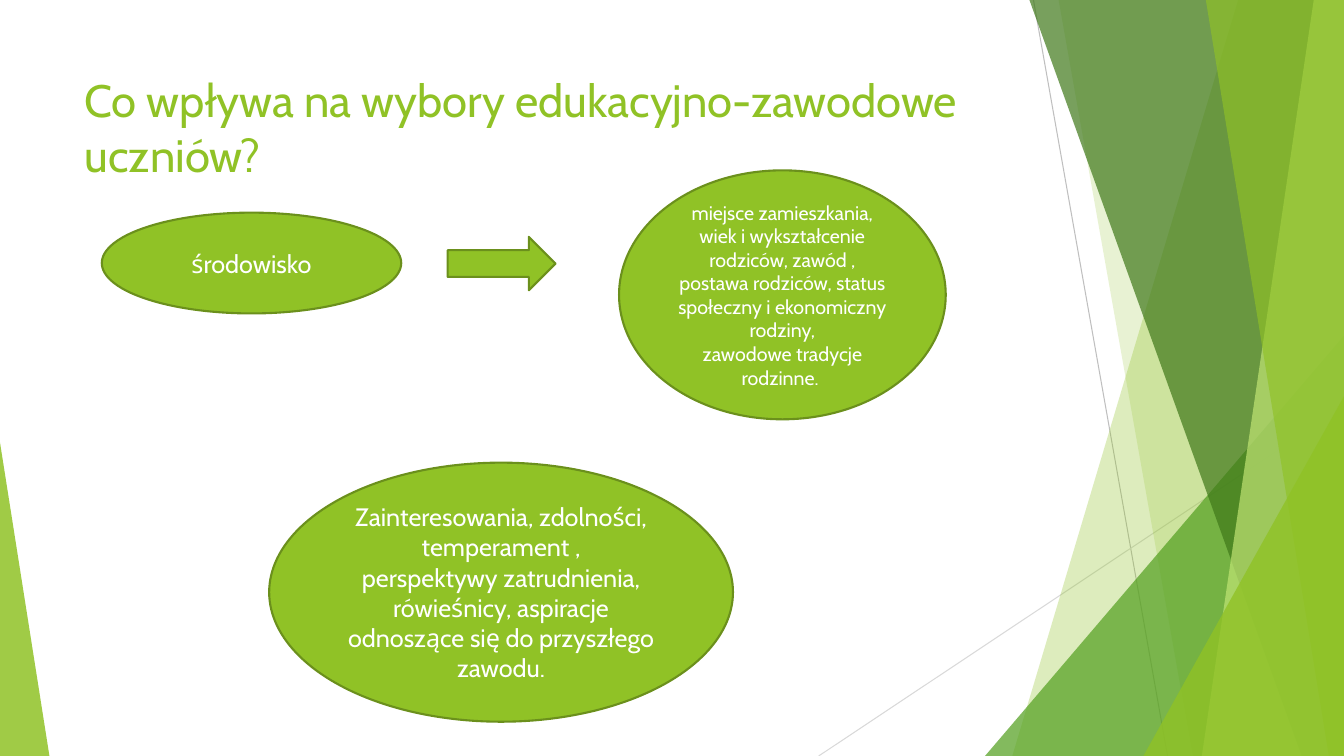
from dataclasses import dataclass
from lxml import etree
from pptx import Presentation
from pptx.dml.color import RGBColor
from pptx.enum.shapes import MSO_CONNECTOR, MSO_SHAPE as SHAPE
from pptx.enum.text import MSO_ANCHOR as ANCHOR, PP_ALIGN as ALIGN
from pptx.oxml.ns import qn
from pptx.util import Inches, Pt


@dataclass(frozen=True)
class Theme:
    font: str = "Cabin"
    lime: str = "90C226"
    pale: str = "C0E474"
    green: str = "54A021"
    dark: str = "3F7819"
    outline: str = "6B901C"
    white: str = "FFFFFF"
    gray: str = "BFBFBF"
    light_gray: str = "D9D9D9"
    title: float = 32.4
    body: float = 18
    small: float = 14


def paint(sp, color, opacity=100, outline=None):
    sp.shadow.inherit = False
    sp.fill.solid()
    sp.fill.fore_color.rgb = RGBColor.from_string(color)
    if opacity < 100:
        clr = sp.fill._xPr.find(qn("a:solidFill"))[0]
        etree.SubElement(clr, qn("a:alpha")).set("val", str(opacity * 1000))
    if outline:
        sp.line.color.rgb = RGBColor.from_string(outline)
        sp.line.width = Pt(1.5)
    else:
        sp.line.fill.background()


def write(sp, paragraphs, size, color, align, anchor):
    tf = sp.text_frame
    for name, value in {"word_wrap": True, "vertical_anchor": anchor}.items():
        setattr(tf, name, value)
    for i, text in enumerate(paragraphs):
        p = tf.add_paragraph() if i else tf.paragraphs[0]
        p.alignment = align
        r = p.add_run()
        r.text = text
        for name, value in {"name": theme.font, "size": Pt(size)}.items():
            setattr(r.font, name, value)
        r.font.color.rgb = RGBColor.from_string(color)


theme = Theme()
W, H = 13.33, 7.5
prs = Presentation()
prs.slide_width, prs.slide_height = Inches(W), Inches(H)
s = prs.slides.add_slide(prs.slide_layouts[6])
shapes = s.shapes

# Thin background lines
for x1, y1, x2, y2, color in [
    (10.25, 0, 11.58, H, theme.gray),
    (W, 4.03, 8.12, H, theme.light_gray),
]:
    line = shapes.add_connector(
        MSO_CONNECTOR.STRAIGHT, Inches(x1), Inches(y1), Inches(x2), Inches(y2))
    line.line.color.rgb = RGBColor.from_string(color)
    line.line.width = Pt(0.75)
    etree.SubElement(line._element.spPr, qn("a:effectLst"))

# Background facets: bands give top and bottom x of the slanted left edge,
# triangles give left, top, width and the apex position
for kind, geometry, color, opacity in [
    ("band", (12.28, 10.04), theme.lime, 30),
    ("band", (10.5, 11.83), theme.lime, 20),
    ("triangle", (9.77, 3.33, 3.56, 1), theme.green, 72),
    ("band", (10.21, 12.91), theme.dark, 70),
    ("band", (13.03, 11.92), theme.pale, 70),
    ("band", (11.96, 13.18), theme.lime, 65),
    ("triangle", (11.34, 3.93, 1.99, 1), theme.lime, 80),
    ("triangle", (0, 4.39, 0.49, 0), theme.lime, 85),
]:
    if kind == "band":
        top_x, bottom_x = geometry
        outline = shapes.build_freeform(Inches(top_x), 0)
        outline.add_line_segments(
            [(Inches(x), Inches(y)) for x, y in [(W, 0), (W, H), (bottom_x, H)]])
        sp = outline.convert_to_shape()
    else:
        x, y, w, apex = geometry
        sp = shapes.add_shape(SHAPE.ISOSCELES_TRIANGLE,
                              Inches(x), Inches(y), Inches(w), Inches(H - y))
        sp.adjustments[0] = apex
    paint(sp, color, opacity)

# Title
title = shapes.add_textbox(Inches(0.74), Inches(0.67), Inches(9.4), Inches(1.44))
write(title, ["Co wpływa na wybory edukacyjno-zawodowe uczniów?"],
      theme.title, theme.lime, ALIGN.LEFT, ANCHOR.TOP)

# Ovals and the arrow between them
for kind, x, y, w, h, size, paragraphs in [
    (SHAPE.OVAL, 1.01, 2.11, 2.97, 1, theme.body, ["środowisko"]),
    (SHAPE.OVAL, 6.14, 1.69, 3.24, 2.47, theme.small, [
        "miejsce zamieszkania, wiek i wykształcenie rodziców, zawód , "
        "postawa rodziców, status społeczny i ekonomiczny rodziny,",
        "zawodowe tradycje rodzinne. "]),
    (SHAPE.RIGHT_ARROW, 4.44, 2.35, 1.07, 0.53, theme.body, []),
    (SHAPE.OVAL, 2.67, 4.59, 4.6, 2.57, theme.body, [
        "Zainteresowania, zdolności, temperament ,",
        "perspektywy zatrudnienia,",
        "rówieśnicy, aspiracje odnoszące się do przyszłego zawodu."]),
]:
    sp = shapes.add_shape(kind, Inches(x), Inches(y), Inches(w), Inches(h))
    paint(sp, theme.lime, outline=theme.outline)
    write(sp, paragraphs, size, theme.white, ALIGN.CENTER, ANCHOR.MIDDLE)

prs.save("out.pptx")
